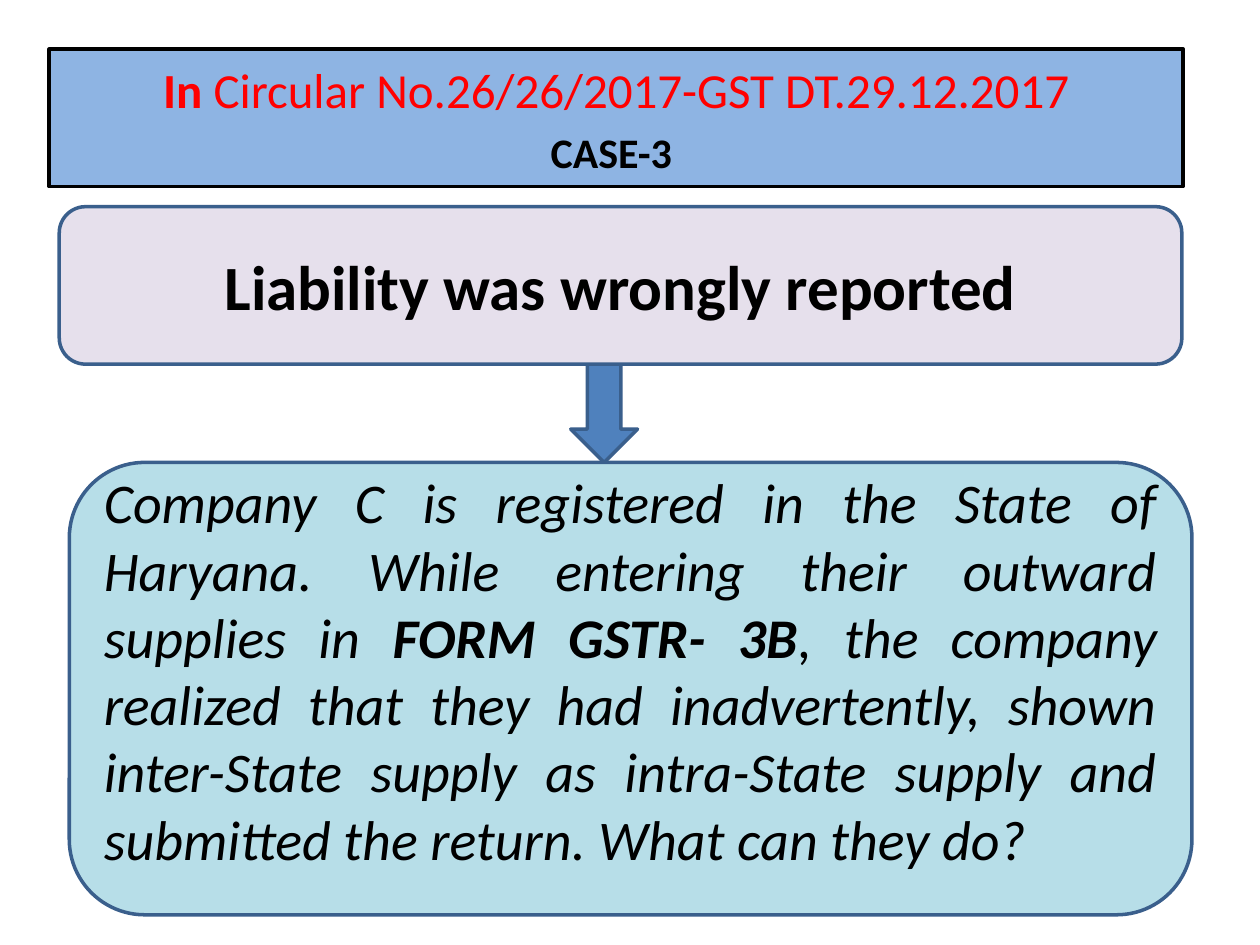
"""Build the GST circular slide: case heading, issue, arrow and question."""
from lxml import etree
from pptx import Presentation
from pptx import util as u
from pptx.dml.color import RGBColor
from pptx.enum import shapes, text
from pptx.oxml.ns import qn

COLORS = {
    "heading": "8EB4E3", "issue": "E6E0EC", "question": "B7DEE8", "arrow": "4F81BD",
    "border": "3A5F8C", "black": "000000", "red": "FF0000",
}

deck = Presentation()
deck.slide_width, deck.slide_height = u.Inches(10), u.Inches(7.5)
slide = deck.slides.add_slide(deck.slide_layouts[5])


def paint(box, fill, border):
    box.fill.solid()
    box.fill.fore_color.rgb = RGBColor.from_string(COLORS[fill])
    box.line.color.rgb = RGBColor.from_string(COLORS[border])
    box.line.width = u.Pt(2)


def write(paragraph, pieces, size, color="black", italic=False, align=text.PP_ALIGN.CENTER):
    paragraph.alignment = align
    for words, bold in pieces:
        run = paragraph.add_run()
        run.text = words
        run.font.name = "Calibri"
        run.font.size = u.Pt(size)
        run.font.bold = bold
        run.font.italic = italic
        run.font.color.rgb = RGBColor.from_string(COLORS[color])


heading = slide.shapes.title
heading.left, heading.top = u.Inches(0.39), u.Inches(0.39)
heading.width, heading.height = u.Inches(9), u.Inches(1.09)
outline = etree.Element(qn("a:prstGeom"), prst="roundRect")
etree.SubElement(outline, qn("a:avLst"))
heading.element.spPr.insert(1, outline)
paint(heading, "heading", "black")
heading.text_frame.auto_size = text.MSO_AUTO_SIZE.NONE
heading.text_frame.vertical_anchor = text.MSO_ANCHOR.MIDDLE
circular = heading.text_frame.paragraphs[0]
case = heading.text_frame.add_paragraph()
write(circular, [("In ", True), ("Circular No.26/26/2017-GST DT.29.12.2017", False)], 28, "red")
write(case, [("CASE-3 ", True)], 24)
for line, size in ((circular, 28), (case, 24)):
    line.space_before = u.Pt(size * 0.2)

blocks = {}
for part, kind, left, top, width, height in (
    ("arrow", shapes.MSO_SHAPE.DOWN_ARROW, 4.53, 2.89, 0.53, 0.78),
    ("issue", shapes.MSO_SHAPE.ROUNDED_RECTANGLE, 0.47, 1.64, 8.91, 1.25),
    ("question", shapes.MSO_SHAPE.ROUNDED_RECTANGLE, 0.55, 3.67, 8.91, 3.59),
):
    block = slide.shapes.add_shape(kind, *map(u.Inches, (left, top, width, height)))
    block.shadow.inherit = False
    paint(block, part, "border")
    block.text_frame.word_wrap = True
    block.text_frame.vertical_anchor = text.MSO_ANCHOR.MIDDLE
    blocks[part] = block

write(blocks["issue"].text_frame.paragraphs[0], [("Liability was wrongly reported", True)], 36)

question = blocks["question"].text_frame
question.margin_bottom = u.Inches(0.35)
write(question.paragraphs[0], [
    ("Company C is registered in the State of Haryana. While entering their outward supplies in ", False),
    ("FORM GSTR- 3B", True),
    (", the company realized that they had inadvertently, shown inter-State supply as "
     "intra-State supply and submitted the return. What can they do?", False),
], 32, italic=True, align=text.PP_ALIGN.JUSTIFY)

deck.save("out.pptx")
